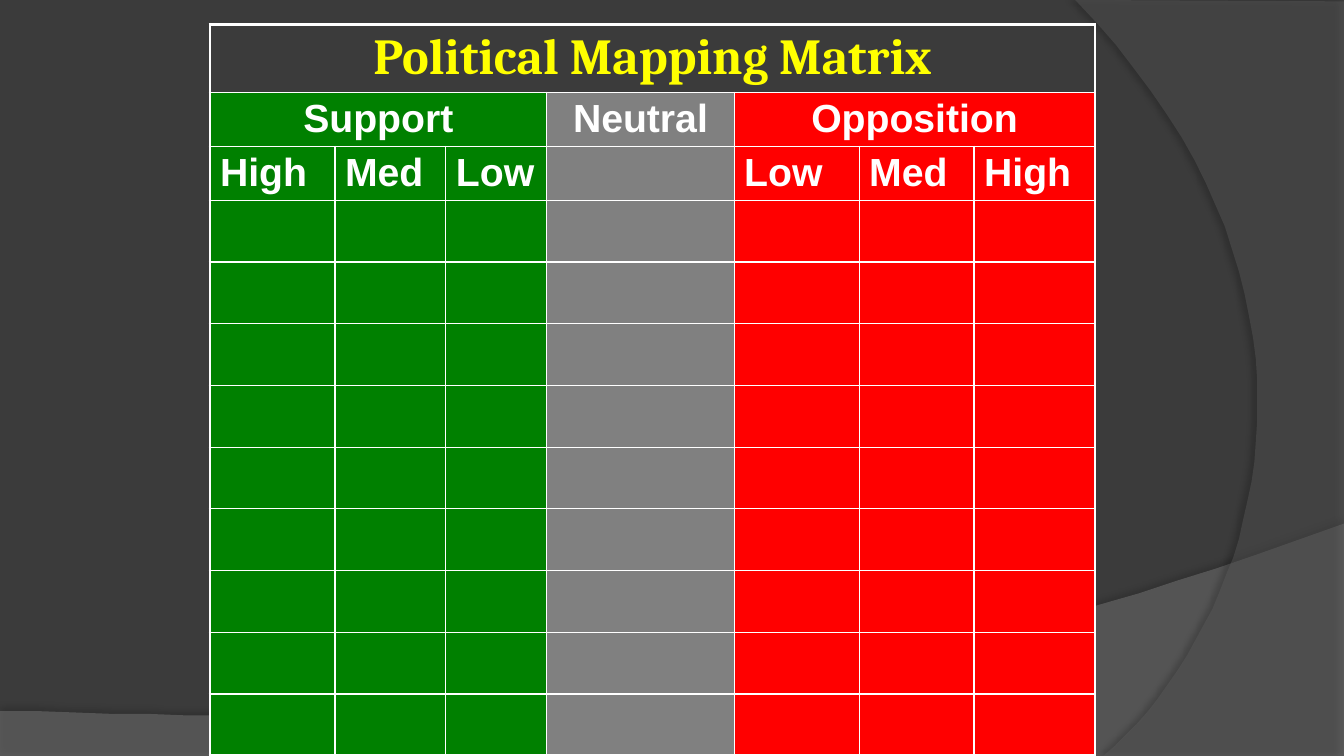
from lxml import etree
from pptx import Presentation
from pptx import util as u
from pptx.dml.color import RGBColor
from pptx.enum import text
from pptx.oxml import ns

GREEN, GRAY, RED = "008000", "808080", "FF0000"
COLUMN_FILLS = [GREEN] * 3 + [GRAY] + [RED] * 3
COLUMN_WIDTHS = [89.3, 79.2, 72, 133.9, 89.3, 82.1, 86.4]
ROW_HEIGHTS = [48.4] + [38.6] * 2 + [44.1] * 9
GROUPS = [("Support", 0, 2), ("Neutral", 3, 3), ("Opposition", 4, 6)]
LEVELS = ["High", "Med", "Low", "", "Low", "Med", "High"]


def rgb(value):
    return RGBColor.from_string(value)


def add_xml(parent, tag, **attrs):
    return etree.SubElement(parent, ns.qn(tag), {k: str(v) for k, v in attrs.items()})


def add_alpha(color, percent):
    add_xml(color, "a:alpha", val=percent * 1000)


def bezier(start, c1, c2, end, steps=40):
    """Points along a cubic curve, both ends included."""
    points = []
    for i in range(steps + 1):
        t = i / steps
        weights = ((1 - t) ** 3, 3 * t * (1 - t) ** 2, 3 * t * t * (1 - t), t ** 3)
        points.append(tuple(sum(w * q[axis] for w, q in zip(weights, (start, c1, c2, end)))
                            for axis in (0, 1)))
    return points


class MatrixSlide:
    line_color = "FFFFFF"
    inner_line = 1
    outer_line = 2.25

    def __init__(self, prs, background):
        self.s = prs.slides.add_slide(prs.slide_layouts[6])
        fill = self.s.background.fill
        fill.solid()
        fill.fore_color.rgb = rgb(background)

    def swoosh(self, points, color, opacity, shadow_opacity, distance, direction):
        """A translucent background outline with a soft shadow."""
        builder = self.s.shapes.build_freeform(*points[0], scale=u.Pt(1))
        builder.add_line_segments(points[1:], close=True)
        sp = builder.convert_to_shape()
        sp.line.fill.background()
        sp.fill.solid()
        sp.fill.fore_color.rgb = rgb(color)
        props = sp.fill._xPr
        add_alpha(props.find(ns.qn("a:solidFill"))[0], opacity)
        sp.shadow.inherit = False
        shadow = add_xml(props.find(ns.qn("a:effectLst")), "a:outerShdw",
                         blurRad=u.Pt(4), dist=u.Pt(distance),
                         dir=direction * 60000, rotWithShape=0)
        add_alpha(add_xml(shadow, "a:srgbClr", val="000000"), shadow_opacity)

    def table(self, left, top, widths, heights):
        frame = self.s.shapes.add_table(len(heights), len(widths), u.Pt(left), u.Pt(top),
                                        u.Pt(sum(widths)), u.Pt(sum(heights)))
        table = frame.table
        table.first_row = table.horz_banding = False
        for column, width in zip(table.columns, widths):
            column.width = u.Pt(width)
        for row, height in zip(table.rows, heights):
            row.height = u.Pt(height)
        return table

    def borders(self, cell, outer_sides):
        props = cell._tc.get_or_add_tcPr()
        for side in "LRTB":
            width = self.outer_line if side in outer_sides else self.inner_line
            ln = add_xml(props, f"a:ln{side}", w=u.Pt(width))
            add_xml(add_xml(ln, "a:solidFill"), "a:srgbClr", val=self.line_color)

    def style_grid(self, table, fills):
        """Border every cell, heavier round the outside, and fill all rows but the title."""
        last_row, last_col = len(table.rows) - 1, len(table.columns) - 1
        for i, row in enumerate(table.rows):
            for j, cell in enumerate(row.cells):
                right = j + cell.span_width - 1 if cell.is_merge_origin else j
                edges = {"L": j == 0, "R": right == last_col, "T": i == 0, "B": i == last_row}
                self.borders(cell, [side for side, outer in edges.items() if outer])
                if i == 0:
                    cell.fill.background()
                else:
                    cell.fill.solid()
                    cell.fill.fore_color.rgb = rgb(fills[j])

    def label(self, cell, words, size=28, font="Arial", color="FFFFFF", centered=True):
        cell.text_frame.text = words
        p = cell.text_frame.paragraphs[0]
        p.alignment = text.PP_ALIGN.CENTER if centered else text.PP_ALIGN.LEFT
        for r in p.runs:
            r.font.size, r.font.name, r.font.bold = u.Pt(size), font, True
            r.font.color.rgb = rgb(color)


def main():
    prs = Presentation()
    prs.slide_width, prs.slide_height = u.Pt(960), u.Pt(540)
    slide = MatrixSlide(prs, "3B3B3B")

    slide.swoosh([(0, 540), (960, 540)]
                 + bezier((960, 374.4), (536.4, 524.9), (375.1, 517.7), (0, 507.6)),
                 "7F7F7F", 45, shadow_opacity=35, distance=3.5, direction=270)
    slide.swoosh([(960, 1.4), (960, 540)]
                 + bezier((788.4, 540), (897.1, 445.7), (977, 216), (768.2, 0)),
                 "5E5E5E", 40, shadow_opacity=45, distance=4, direction=180)

    matrix = slide.table(150, 17.3, COLUMN_WIDTHS, ROW_HEIGHTS)
    matrix.cell(0, 0).merge(matrix.cell(0, 6))
    slide.label(matrix.cell(0, 0), "Political Mapping Matrix", 36, "Cambria", "FFFF00")
    for name, first, last in GROUPS:
        if last > first:
            matrix.cell(1, first).merge(matrix.cell(1, last))
        slide.label(matrix.cell(1, first), name)
    for col, level in enumerate(LEVELS):
        if level:
            slide.label(matrix.cell(2, col), level, centered=False)
    slide.style_grid(matrix, COLUMN_FILLS)

    prs.save("out.pptx")


if __name__ == "__main__":
    main()
